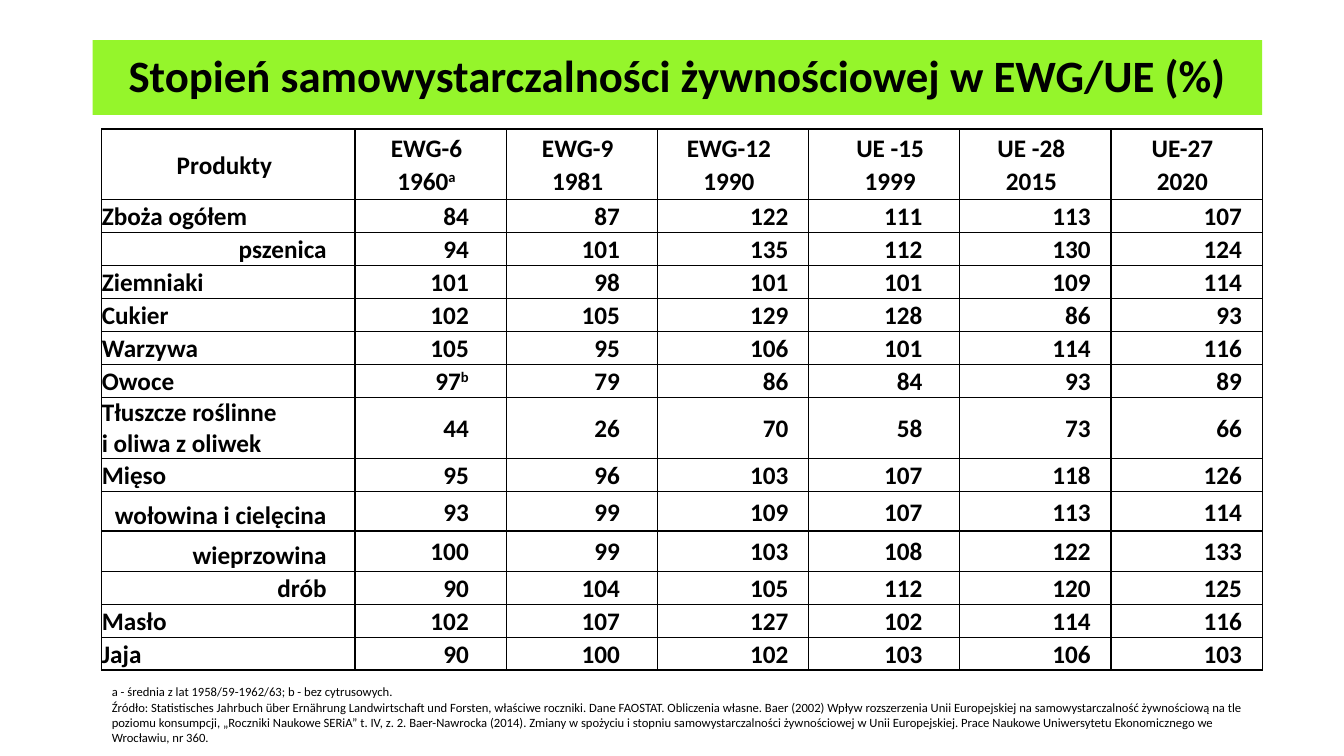
from lxml.etree import SubElement
from pptx import Presentation
from pptx.dml.color import RGBColor
from pptx.enum.shapes import MSO_SHAPE
from pptx.enum.text import MSO_ANCHOR, PP_ALIGN
from pptx.oxml.ns import qn
from pptx.util import Inches, Pt

WIDTH, HEIGHT = Inches(13.33), Inches(7.5)
COLORS = {"banner": "95F52B", "ink": "000000"}
FONT = "Calibri"

TITLE_BOX = (6.9, 5.33, 87.02, 9.87)
TABLE_BOX = (7.58, 17.07, 86.27, 70.67)
NOTES_BOX = (7.58, 89.87, 86.27, 9.47)
PRODUCT_WIDTH, PERIOD_WIDTH = 18.83, 11.25
HEADER_HEIGHT, ROW_HEIGHT = 9.33, 4
TALL_ROWS = {7: 5.2, 9: 5.2, 10: 5.33}
INDENTED_COLUMNS = (1, 2, 4)

TITLE = "Stopień samowystarczalności żywnościowej w EWG/UE (%)"
HEADERS = ["Produkty", "EWG-6\n1960^a", "EWG-9\n1981", "EWG-12\n1990",
           "UE -15\n1999", "UE -28\n2015", "UE-27\n2020"]
SUBPRODUCTS = {"pszenica", "wołowina i cielęcina", "wieprzowina", "drób"}
PRODUCTS = [
    ("Zboża ogółem", "84 87 122 111 113 107"),
    ("pszenica", "94 101 135 112 130 124"),
    ("Ziemniaki", "101 98 101 101 109 114"),
    ("Cukier", "102 105 129 128 86 93"),
    ("Warzywa", "105 95 106 101 114 116"),
    ("Owoce", "97^b 79 86 84 93 89"),
    ("Tłuszcze roślinne\ni oliwa z oliwek", "44 26 70 58 73 66"),
    ("Mięso", "95 96 103 107 118 126"),
    ("wołowina i cielęcina", "93 99 109 107 113 114"),
    ("wieprzowina", "100 99 103 108 122 133"),
    ("drób", "90 104 105 112 120 125"),
    ("Masło", "102 107 127 102 114 116"),
    ("Jaja", "90 100 102 103 106 103"),
]
NOTES = (
    "a - średnia z lat 1958/59-1962/63; b - bez cytrusowych.\n"
    "Źródło: Statistisches Jahrbuch über Ernährung Landwirtschaft und Forsten, "
    "właściwe roczniki. Dane FAOSTAT. Obliczenia własne. Baer (2002) Wpływ "
    "rozszerzenia Unii Europejskiej na samowystarczalność żywnościową na tle "
    "poziomu konsumpcji, „Roczniki Naukowe SERiA” t. IV, z. 2. Baer-Nawrocka "
    "(2014). Zmiany w spożyciu i stopniu samowystarczalności żywnościowej w Unii "
    "Europejskiej. Prace Naukowe Uniwersytetu Ekonomicznego we Wrocławiu, nr 360."
)


def across(percent):
    return round(WIDTH * percent / 100)


def down(percent):
    return round(HEIGHT * percent / 100)


def place(box):
    left, top, width, height = box
    return across(left), down(top), across(width), down(height)


def write(tf, text, size, bold=False, align=PP_ALIGN.LEFT, spacing=1.0):
    for i, line in enumerate(text.split("\n")):
        p = tf.paragraphs[0] if i == 0 else tf.add_paragraph()
        p.alignment, p.line_spacing = align, spacing
        p.font.name, p.font.size, p.font.bold = FONT, Pt(size), bold
        p.font.color.rgb = RGBColor.from_string(COLORS["ink"])
        base, _, mark = line.partition("^")
        p.add_run().text = base
        if mark:
            r = p.add_run()
            r.text = mark
            r.font._element.set("baseline", "30000")


def indent(tf, side, inches):
    for p in tf.paragraphs:
        p._p.get_or_add_pPr().set(side, str(Inches(inches)))


def add_borders(cell):
    tc_pr = cell._tc.get_or_add_tcPr()
    for i, side in enumerate(("lnL", "lnR", "lnT", "lnB")):
        line = tc_pr.makeelement(qn(f"a:{side}"), {"w": str(Pt(1))})
        fill = SubElement(line, qn("a:solidFill"))
        SubElement(fill, qn("a:srgbClr"), val=COLORS["ink"])
        tc_pr.insert(i, line)


def fill_cell(cell, text, align, anchor=MSO_ANCHOR.MIDDLE, right=0.08, spacing=1.07):
    cell.margin_left = cell.margin_top = cell.margin_bottom = 0
    cell.margin_right = Inches(right)
    cell.vertical_anchor = anchor
    cell.fill.background()
    add_borders(cell)
    write(cell.text_frame, text, 18, True, align, spacing)
    return cell.text_frame


def add_title(slide):
    sp = slide.shapes.add_shape(MSO_SHAPE.RECTANGLE, *place(TITLE_BOX))
    sp.shadow.inherit = False
    sp.fill.solid()
    sp.fill.fore_color.rgb = RGBColor.from_string(COLORS["banner"])
    sp.line.fill.background()
    sp.text_frame.word_wrap = True
    sp.text_frame.vertical_anchor = MSO_ANCHOR.MIDDLE
    write(sp.text_frame, TITLE, 32, True, PP_ALIGN.CENTER, 0.9)


def add_product_row(table, row, product, values):
    sub = product in SUBPRODUCTS
    tf = fill_cell(table.cell(row, 0), product,
                   PP_ALIGN.RIGHT if sub else PP_ALIGN.LEFT,
                   MSO_ANCHOR.MIDDLE if row == 1 else MSO_ANCHOR.BOTTOM,
                   spacing=1.0 if "\n" in product else 1.07)
    if sub:
        indent(tf, "marR", 0.2)
    for col, value in enumerate(values.split(), 1):
        tf = fill_cell(table.cell(row, col), value, PP_ALIGN.RIGHT, right=0.2)
        if col in INDENTED_COLUMNS:
            indent(tf, "marR", 0.17)


def add_sufficiency_table(slide):
    table = slide.shapes.add_table(len(PRODUCTS) + 1, len(HEADERS),
                                   *place(TABLE_BOX)).table
    table.first_row = table.horz_banding = False
    for i, column in enumerate(table.columns):
        column.width = across(PERIOD_WIDTH if i else PRODUCT_WIDTH)
    for i, row in enumerate(table.rows):
        row.height = down(TALL_ROWS.get(i, ROW_HEIGHT) if i else HEADER_HEIGHT)
    for col, header in enumerate(HEADERS):
        tf = fill_cell(table.cell(0, col), header, PP_ALIGN.CENTER)
        if header.startswith("UE -15"):
            indent(tf, "indent", 0.2)
    for row, (product, values) in enumerate(PRODUCTS, 1):
        add_product_row(table, row, product, values)


def add_notes(slide):
    tf = slide.shapes.add_textbox(*place(NOTES_BOX)).text_frame
    tf.word_wrap = True
    write(tf, NOTES, 9)


def main():
    prs = Presentation()
    prs.slide_width, prs.slide_height = WIDTH, HEIGHT
    slide = prs.slides.add_slide(prs.slide_layouts[6])
    add_title(slide)
    add_sufficiency_table(slide)
    add_notes(slide)
    prs.save("out.pptx")


if __name__ == "__main__":
    main()
